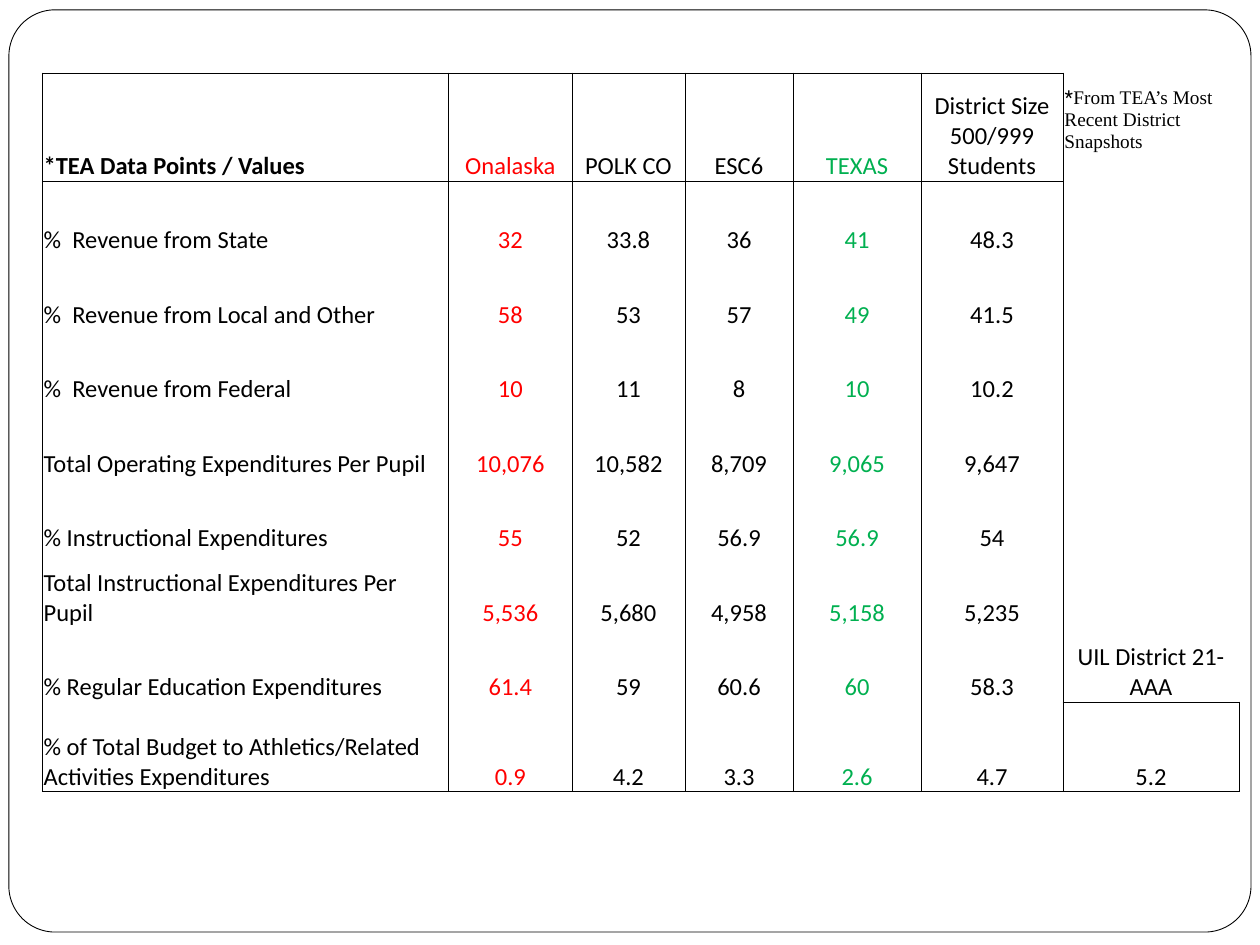
from lxml import etree
from pptx import Presentation
from pptx.dml.color import RGBColor
from pptx.enum.shapes import MSO_SHAPE
from pptx.enum.text import MSO_ANCHOR, PP_ALIGN
from pptx.oxml.ns import qn
from pptx.util import Cm, Pt

ROUNDED = MSO_SHAPE.ROUNDED_RECTANGLE
BOTTOM = MSO_ANCHOR.BOTTOM
LEFT, CENTER = PP_ALIGN.LEFT, PP_ALIGN.CENTER

BLACK, WHITE, RED, GREEN = "000000", "FFFFFF", "FF0000", "00B050"
LINE_WIDTH = Pt(0.5)
COLUMN_WIDTHS = [8.2, 2.48, 2.28, 2.18, 2.58, 2.86, 3.55]
ROW_HEIGHTS = [2.18] + [1.5] * 7 + [1.81]
COLUMN_COLORS = [BLACK, RED, BLACK, BLACK, GREEN, BLACK, BLACK]
UIL_COLUMN = len(COLUMN_WIDTHS) - 1
LAST_ROW = len(ROW_HEIGHTS) - 1

DISTRICT_DATA = [
    ["*TEA Data Points / Values", "Onalaska", "POLK CO", "ESC6", "TEXAS",
     "District Size 500/999 Students"],
    ["%  Revenue from State", "32", "33.8", "36", "41", "48.3"],
    ["%  Revenue from Local and Other", "58", "53", "57", "49", "41.5"],
    ["%  Revenue from Federal", "10", "11", "8", "10", "10.2"],
    ["Total Operating Expenditures Per Pupil", "10,076", "10,582", "8,709", "9,065", "9,647"],
    ["% Instructional Expenditures", "55", "52", "56.9", "56.9", "54"],
    ["Total Instructional Expenditures Per Pupil", "5,536", "5,680", "4,958", "5,158", "5,235"],
    ["% Regular Education Expenditures", "61.4", "59", "60.6", "60", "58.3",
     "UIL District 21-AAA"],
    ["% of Total Budget to Athletics/Related Activities Expenditures",
     "0.9", "4.2", "3.3", "2.6", "4.7", "5.2"],
]
SOURCE_NOTE = [("*", "Roboto Slab"),
               ("From TEA’s Most Recent District Snapshots", "Times New Roman")]


def color(hex_value):
    return RGBColor.from_string(hex_value)


def add_run(paragraph, text, hex_value=BLACK, **font_format):
    run = paragraph.add_run()
    run.text = text
    run.font.color.rgb = color(hex_value)
    for name, value in font_format.items():
        setattr(run.font, name, value)


def ruled_sides(row, column):
    """Sides with a line: the full grid outline, plus a single box for the UIL value."""
    sides = {"L"}
    if column < UIL_COLUMN or row == LAST_ROW:
        sides.add("R")
    if row == LAST_ROW or (row == 0 and column < UIL_COLUMN):
        sides.add("B")
    if (row < 2 and column < UIL_COLUMN) or (row == LAST_ROW and column == UIL_COLUMN):
        sides.add("T")
    if row == LAST_ROW - 1 and column == UIL_COLUMN:
        sides.add("B")
    return sides


def set_borders(cell, sides):
    properties = cell._tc.get_or_add_tcPr()
    for position, side in enumerate("LRTB"):
        line = etree.Element(qn(f"a:ln{side}"), w=str(LINE_WIDTH))
        if side in sides:
            fill = etree.SubElement(line, qn("a:solidFill"))
            etree.SubElement(fill, qn("a:srgbClr"), val=BLACK)
        else:
            etree.SubElement(line, qn("a:noFill"))
        properties.insert(position, line)


def add_frame(slide, left, top, width, height):
    frame = slide.shapes.add_shape(ROUNDED, left, top, width, height)
    frame.adjustments[0] = 0.05
    frame.shadow.inherit = False
    frame.fill.solid()
    frame.fill.fore_color.rgb = color(WHITE)
    frame.line.color.rgb = color(BLACK)
    frame.line.width = LINE_WIDTH


def add_source_note(cell):
    cell.margin_bottom = Cm(0.58)
    paragraph = cell.text_frame.paragraphs[0]
    paragraph.alignment = LEFT
    for text, font_name in SOURCE_NOTE:
        add_run(paragraph, text, name=font_name, size=Pt(11), bold=False)


def add_district_table(slide, left, top):
    width, height = Cm(sum(COLUMN_WIDTHS)), Cm(sum(ROW_HEIGHTS))
    table = slide.shapes.add_table(len(ROW_HEIGHTS), len(COLUMN_WIDTHS),
                                   left, top, width, height).table
    table.first_row = table.horz_banding = False
    for column, column_width in zip(table.columns, COLUMN_WIDTHS):
        column.width = Cm(column_width)
    for row, row_height in zip(table.rows, ROW_HEIGHTS):
        row.height = Cm(row_height)

    cell_format = {"vertical_anchor": BOTTOM, "margin_left": Cm(0.03),
                   "margin_right": Cm(0.03), "margin_top": Cm(0.03), "margin_bottom": 0}
    for r in range(len(ROW_HEIGHTS)):
        for c, text_color in enumerate(COLUMN_COLORS):
            cell = table.cell(r, c)
            for name, value in cell_format.items():
                setattr(cell, name, value)
            cell.fill.background()
            set_borders(cell, ruled_sides(r, c))
            if c < len(DISTRICT_DATA[r]):
                paragraph = cell.text_frame.paragraphs[0]
                paragraph.alignment = CENTER if c else LEFT
                add_run(paragraph, DISTRICT_DATA[r][c], text_color,
                        name="Calibri", size=Pt(14), bold=(r == c == 0))
    add_source_note(table.cell(0, UIL_COLUMN))


def main():
    presentation = Presentation()
    presentation.slide_width, presentation.slide_height = Cm(25.4), Cm(19.05)
    slide = presentation.slides.add_slide(presentation.slide_layouts[6])
    add_frame(slide, Cm(0.18), Cm(0.2), Cm(25.04), Cm(18.59))
    add_district_table(slide, Cm(0.85), Cm(1.47))
    presentation.save("out.pptx")


if __name__ == "__main__":
    main()
